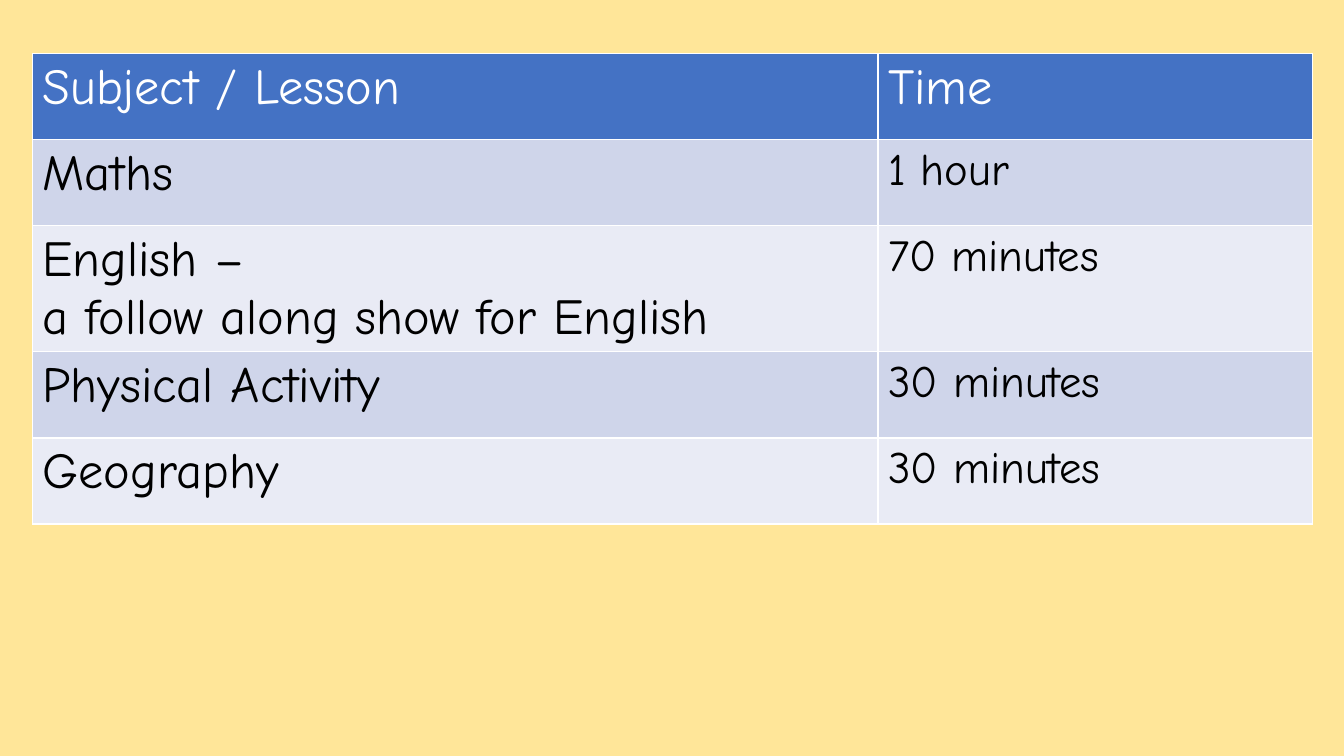
"""Build a slide with a timetable of lessons and their durations."""
from dataclasses import dataclass

import pptx
import pptx.dml.color
import pptx.table
import pptx.util

Pt = pptx.util.Pt
RGBColor = pptx.dml.color.RGBColor

BACKGROUND = RGBColor(0xFF, 0xE6, 0x99)
HEADER_FILL = RGBColor(0x44, 0x72, 0xC4)
BAND_FILLS = (RGBColor(0xE9, 0xEB, 0xF5), RGBColor(0xCF, 0xD5, 0xEA))
WHITE = RGBColor(0xFF, 0xFF, 0xFF)
BLACK = RGBColor(0x00, 0x00, 0x00)

FONT = "Comic Neue"
SUBJECT_SIZE = 36
DURATION_SIZE = 32
SUBJECT_WIDTH = 604
TIME_WIDTH = 310.3
ROW_HEIGHT = 61.5


@dataclass(frozen=True)
class Lesson:
    subject: str
    duration: str


HEADINGS = Lesson("Subject / Lesson", "Time")
LESSONS = (
    Lesson("Maths", "1 hour"),
    Lesson("English –\na follow along show for English", "70 minutes"),
    Lesson("Physical Activity", "30 minutes"),
    Lesson("Geography", "30 minutes"),
)


def fill_cell(cell: pptx.table._Cell, text: str, size: float,
              color: RGBColor, fill: RGBColor) -> None:
    cell.fill.solid()
    cell.fill.fore_color.rgb = fill
    cell.text_frame.text = text
    for paragraph in cell.text_frame.paragraphs:
        for run in paragraph.runs:
            run.font.name = FONT
            run.font.size = Pt(size)
            run.font.bold = False
            run.font.color.rgb = color


def fill_row(timetable: pptx.table.Table, row: int, lesson: Lesson,
             duration_size: float, color: RGBColor, fill: RGBColor) -> None:
    timetable.rows[row].height = Pt(ROW_HEIGHT)
    fill_cell(timetable.cell(row, 0), lesson.subject, SUBJECT_SIZE, color, fill)
    fill_cell(timetable.cell(row, 1), lesson.duration, duration_size, color, fill)


def main() -> None:
    presentation = pptx.Presentation()
    presentation.slide_width = Pt(960)
    presentation.slide_height = Pt(540)
    slide = presentation.slides.add_slide(presentation.slide_layouts[6])
    slide.background.fill.solid()
    slide.background.fill.fore_color.rgb = BACKGROUND

    row_count = len(LESSONS) + 1
    timetable = slide.shapes.add_table(
        row_count, 2, Pt(23.2), Pt(38.3),
        Pt(SUBJECT_WIDTH + TIME_WIDTH), Pt(ROW_HEIGHT * row_count)).table
    timetable.columns[0].width = Pt(SUBJECT_WIDTH)
    timetable.columns[1].width = Pt(TIME_WIDTH)

    fill_row(timetable, 0, HEADINGS, SUBJECT_SIZE, WHITE, HEADER_FILL)
    for row, lesson in enumerate(LESSONS, start=1):
        fill_row(timetable, row, lesson, DURATION_SIZE, BLACK, BAND_FILLS[row % 2])

    presentation.save("out.pptx")


if __name__ == "__main__":
    main()
